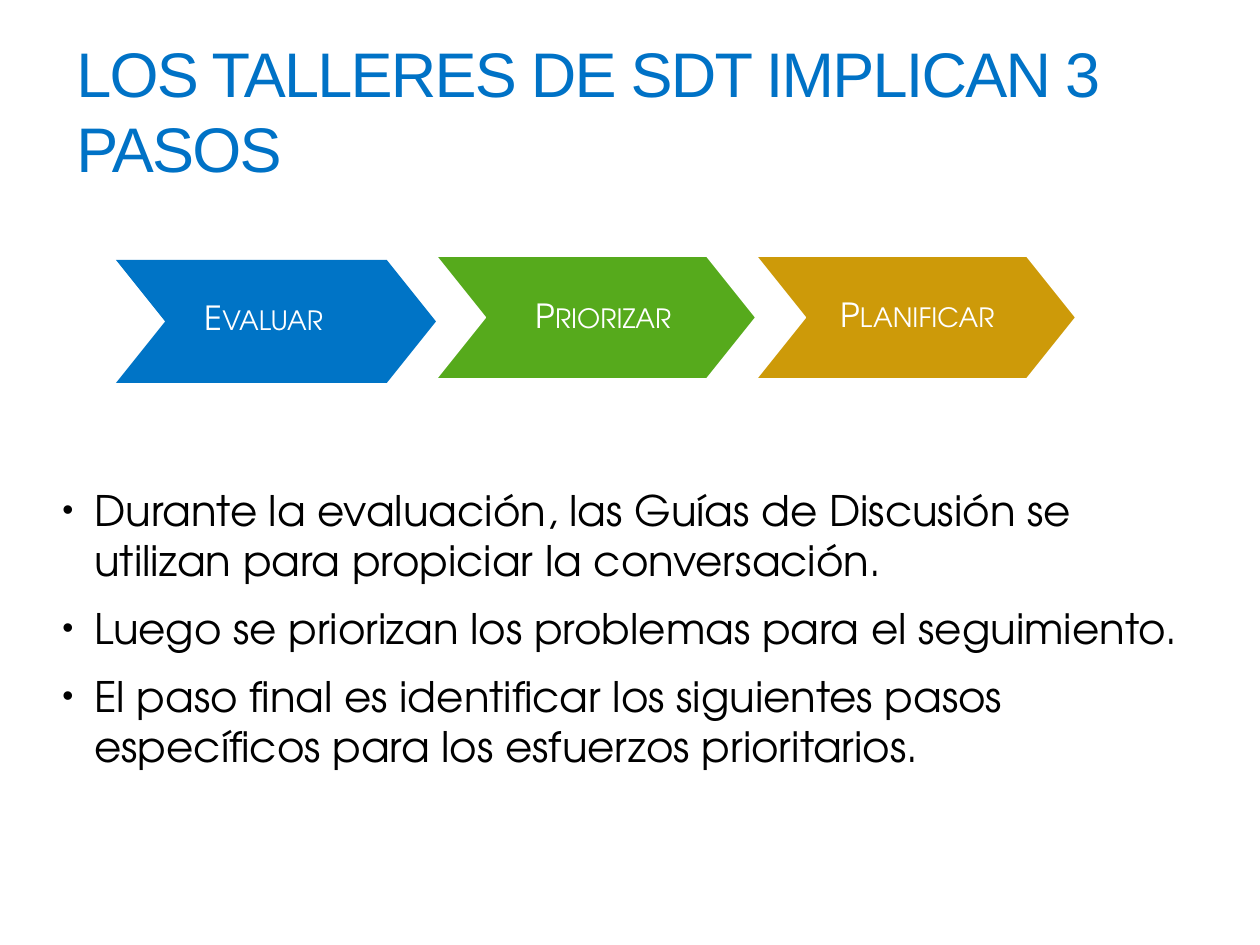
from dataclasses import dataclass

from lxml.etree import SubElement
from pptx import Presentation
from pptx.dml.color import RGBColor as Rgb
from pptx.enum.shapes import MSO_SHAPE as Shape
from pptx.enum.text import MSO_ANCHOR as Anchor, PP_ALIGN as Align
from pptx.oxml.ns import qn
from pptx.util import Emu, Pt

DPI = 126


@dataclass(frozen=True)
class Theme:
    blue: str = "0072C6"
    black: str = "000000"
    white: str = "FFFFFF"
    steps: tuple = ("0074C6", "56AA1C", "CD9A09")
    head: str = "Arial"
    body: str = "TeX Gyre Adventor"
    big: int = 36
    mid: int = 24
    small: int = 19


T = Theme()


def px(n):
    return Emu(round(n * 914400 / DPI))


def add_bullet(para):
    props = para._p.get_or_add_pPr()
    props.set("marL", str(px(32)))
    props.set("indent", str(-px(32)))
    SubElement(props, qn("a:buSzPct"), val="75000")
    SubElement(props, qn("a:buFont"), typeface="Arial")
    SubElement(props, qn("a:buChar"), char="•")


def add_text(slide, box, text, size, color, font=T.body, align=Align.LEFT,
             anchor=Anchor.TOP, pad=None, line=None, gap=0, bullet=False,
             caps=False, track=0):
    """Put each line of text in its own paragraph."""
    frame = slide.shapes.add_textbox(*map(px, box)).text_frame
    frame.word_wrap = True
    frame.vertical_anchor = anchor
    if pad is not None:
        frame.margin_left = frame.margin_right = px(pad)
        frame.margin_top = frame.margin_bottom = px(pad)
    for i, words in enumerate(text.split("\n")):
        para = frame.paragraphs[0] if i == 0 else frame.add_paragraph()
        para.alignment = align
        if line:
            para.line_spacing = line
        if i:
            para.space_before = Pt(gap)
        if bullet:
            add_bullet(para)
        run = para.add_run()
        run.text = words
        run.font.size = Pt(size)
        run.font.name = font
        run.font.color.rgb = Rgb.from_string(color)
        props = run._r.get_or_add_rPr()
        if caps:
            props.set("cap", "small")
        if track:
            props.set("spc", str(track))


def add_title(slide, box):
    add_text(slide, box, "LOS TALLERES DE SDT IMPLICAN 3 PASOS", T.big,
             T.blue, font=T.head, anchor=Anchor.MIDDLE, track=-100)


def add_step(slide, box, name, label, fill, edge):
    """Draw a chevron and its name; label is relative to the box."""
    left, top, _, _ = box
    arrow = slide.shapes.add_shape(Shape.CHEVRON, *map(px, box))
    arrow.adjustments[0] = 0.4
    arrow.shadow.inherit = False
    arrow.fill.solid()
    arrow.fill.fore_color.rgb = Rgb.from_string(fill)
    if edge:
        arrow.line.color.rgb = Rgb.from_string(T.white)
        arrow.line.width = Pt(1)
    else:
        arrow.line.fill.background()
    x, y, wide, high = label
    add_text(slide, (left + x, top + y, wide, high), name, T.small, T.white,
             align=Align.CENTER, anchor=Anchor.MIDDLE, pad=19, line=0.9,
             caps=True)


def add_steps(slide, box):
    left, top, wide, high = box
    step = wide // 3
    rows = (
        ("Evaluar", 4, (48, 7, 200, 105)),
        ("Priorizar", 0, (36, 4, 263, 116)),
        ("Planificar", 0, (64, 3, 195, 116)),
    )
    for i, (name, drop, label) in enumerate(rows):
        add_step(slide, (left + i * step, top + drop, step, high), name,
                 label, T.steps[i], edge=i > 0)


def add_body(slide, box):
    text = "\n".join((
        "Durante la evaluación, las Guías de Discusión se utilizan para "
        "propiciar la conversación.",
        "Luego se priorizan los problemas para el seguimiento.",
        "El paso final es identificar los siguientes pasos específicos para "
        "los esfuerzos prioritarios.",
    ))
    add_text(slide, box, text, T.mid, T.black, gap=10, bullet=True)


def main():
    deck = Presentation()
    deck.slide_width, deck.slide_height = px(1260), px(945)
    slide = deck.slides.add_slide(deck.slide_layouts[6])
    add_body(slide, (50, 478, 1159, 344))
    add_title(slide, (64, 42, 1159, 136))
    add_steps(slide, (116, 256, 960, 123))
    deck.save("out.pptx")


if __name__ == "__main__":
    main()
